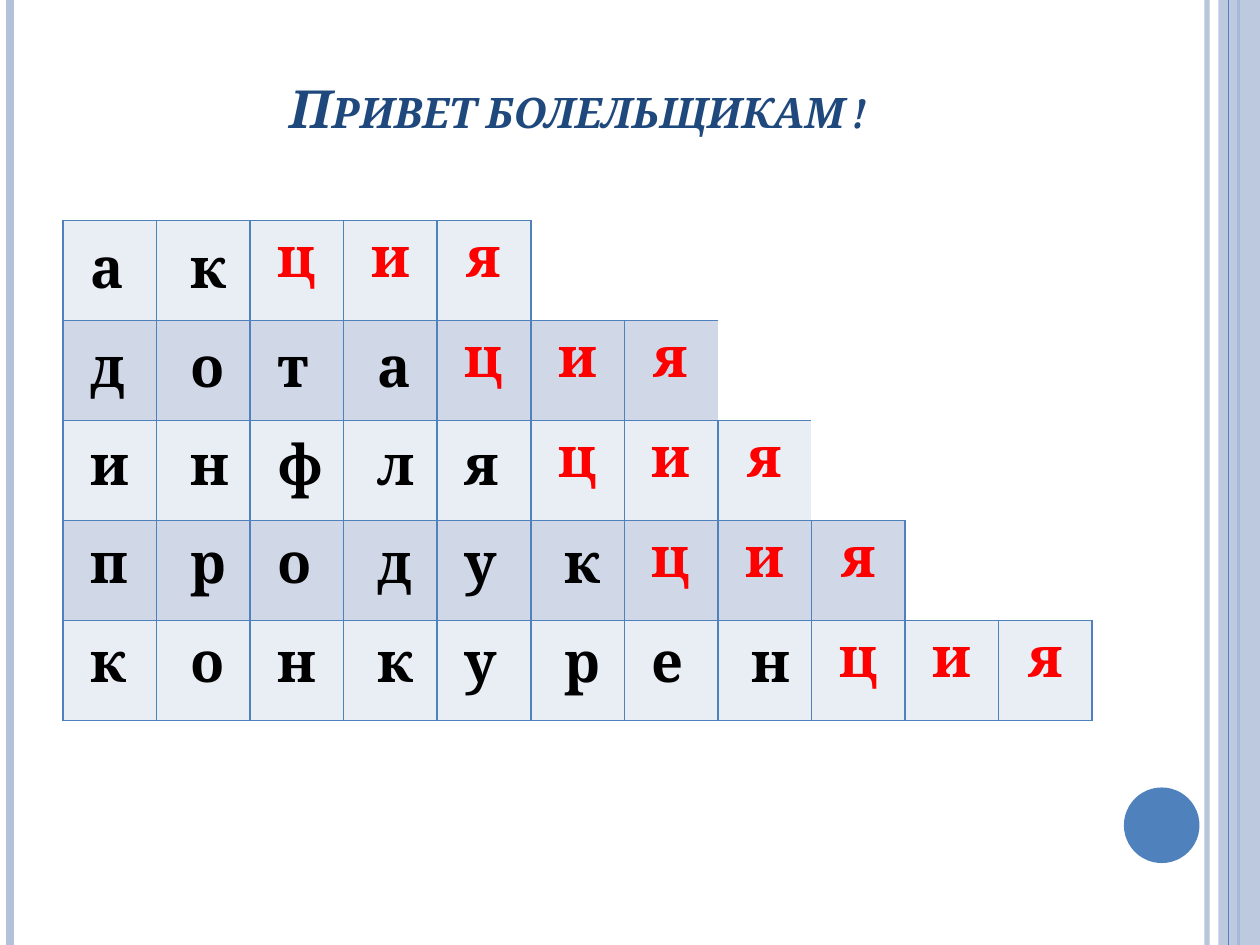
from lxml import etree
from pptx import Presentation
from pptx.dml.color import RGBColor
from pptx.enum import shapes, text
from pptx.oxml import ns
from pptx.util import Inches, Pt

BLUE = RGBColor(0x4F, 0x81, 0xBD)
PALE_BLUE = RGBColor(0xB3, 0xC1, 0xDB)
NAVY = RGBColor(0x1F, 0x49, 0x7D)
RED = RGBColor(0xFF, 0x00, 0x00)
BLACK = RGBColor(0x00, 0x00, 0x00)
WHITE = RGBColor(0xFF, 0xFF, 0xFF)
ROW_FILLS = [RGBColor(0xE9, 0xED, 0xF4), RGBColor(0xD0, 0xD8, 0xE8)]

ENDING = "ция"
WORDS = ["акция", "дотация", "инфляция", "продукция", "конкуренция"]
OPEN_ENDED_ROWS = (1, 2)  # no line after the last letter
MERGED = [(0, 5, 0, 6), (0, 7, 1, 7), (0, 8, 2, 10), (3, 9, 3, 10)]
ROWS, COLUMNS = len(WORDS), max(map(len, WORDS))
COLUMN_WIDTH = 8.17 / COLUMNS


def set_opacity(element, percent):
    color = next(element.iter(ns.qn("a:srgbClr")))
    etree.SubElement(color, ns.qn("a:alpha"), val=str(percent * 1000))


def write_letter(paragraph, letter, color):
    run = paragraph.add_run()
    run.text = letter
    style = {"name": "Cambria", "size": Pt(32), "bold": True}
    for name, value in style.items():
        setattr(run.font, name, value)
    run.font.color.rgb = color


presentation = Presentation()
presentation.slide_width = Inches(10)
presentation.slide_height = Inches(7.5)
slide = presentation.slides.add_slide(presentation.slide_layouts[5])

# Side stripes and circle
decorations = [
    ("line", 9.58, PALE_BLUE, 3, 93),
    ("line", 0.08, PALE_BLUE, 4.5, 100),
    ("line", 9.83, BLUE, 1.5, 100),
    (shapes.MSO_SHAPE.RECTANGLE, (9.67, 0, 0.33, 7.5), PALE_BLUE, 0, 87),
    ("line", 9.75, BLUE, 0.75, 100),
    (shapes.MSO_SHAPE.OVAL, (8.92, 6.25, 0.6, 0.6), BLUE, 0, 100),
]
for kind, place, color, width, opacity in decorations:
    if kind == "line":
        shape = slide.shapes.add_connector(
            shapes.MSO_CONNECTOR.STRAIGHT, Inches(place), 0, Inches(place), Inches(7.5))
        shape.line.color.rgb = color
        shape.line.width = Pt(width)
        etree.SubElement(shape._element.spPr, ns.qn("a:effectLst"))
    else:
        shape = slide.shapes.add_shape(kind, *map(Inches, place))
        shape.fill.solid()
        shape.fill.fore_color.rgb = color
        shape.line.fill.background()
        shape.shadow.inherit = False
    if opacity < 100:
        set_opacity(shape._element.spPr, opacity)

# Title
title = slide.shapes.title
title.left, title.top = Inches(0.5), Inches(0.3)
title.width, title.height = Inches(8.17), Inches(0.85)
title.text_frame.vertical_anchor = text.MSO_ANCHOR.BOTTOM
paragraph = title.text_frame.paragraphs[0]
paragraph.alignment = text.PP_ALIGN.CENTER
run = paragraph.add_run()
run.text = "Привет болельщикам !"
title_style = {"name": "Cambria", "size": Pt(30), "bold": True, "italic": True}
for name, value in title_style.items():
    setattr(run.font, name, value)
run.font.color.rgb = NAVY
run._r.get_or_add_rPr().set("cap", "small")

# Word grid: each row is filled as far as its word reaches
table = slide.shapes.add_table(
    ROWS, COLUMNS, Inches(0.5), Inches(1.75), Inches(8.17), Inches(3.97)).table
for column in table.columns:
    column.width = Inches(COLUMN_WIDTH)
for row in table.rows:
    row.height = Inches(3.97 / ROWS)
for top, left, bottom, right in MERGED:
    table.cell(top, left).merge(table.cell(bottom, right))

lengths = [len(word) for word in WORDS]
for r, word in enumerate(WORDS):
    above = lengths[r - 1] if r else 0
    below = lengths[r + 1] if r + 1 < ROWS else 0
    last_edge = len(word) - (r in OPEN_ENDED_ROWS)
    for c in range(COLUMNS):
        cell = table.cell(r, c)
        filled = c < len(word)
        cell.fill.solid()
        cell.fill.fore_color.rgb = ROW_FILLS[r % 2] if filled else WHITE
        if len(word) - len(ENDING) <= c < len(word):
            paragraph = cell.text_frame.paragraphs[0]
            paragraph.alignment = text.PP_ALIGN.CENTER
            write_letter(paragraph, word[c], RED)
        edges = {
            "a:lnL": c <= last_edge,
            "a:lnR": c + 1 <= last_edge,
            "a:lnT": filled or c < above,
            "a:lnB": filled or c < below,
        }
        properties = cell._tc.get_or_add_tcPr()
        for position, (tag, visible) in enumerate(edges.items()):
            border = etree.Element(ns.qn(tag), w=str(Pt(1)))
            properties.insert(position, border)
            if visible:
                fill = etree.SubElement(border, ns.qn("a:solidFill"))
                etree.SubElement(fill, ns.qn("a:srgbClr"), val=str(BLUE))
            else:
                etree.SubElement(border, ns.qn("a:noFill"))

# Word stems lie over the grid, odd columns slightly further right
for r, word in enumerate(WORDS):
    for c, letter in enumerate(word.removesuffix(ENDING)):
        left = 0.62 + c * COLUMN_WIDTH + 0.05 * (c % 2)
        box = slide.shapes.add_textbox(
            Inches(left), Inches(1.8 + 0.78 * r), Inches(0.6), Inches(0.64))
        box.text_frame.word_wrap = True
        write_letter(box.text_frame.paragraphs[0], letter, BLACK)

presentation.save("out.pptx")
